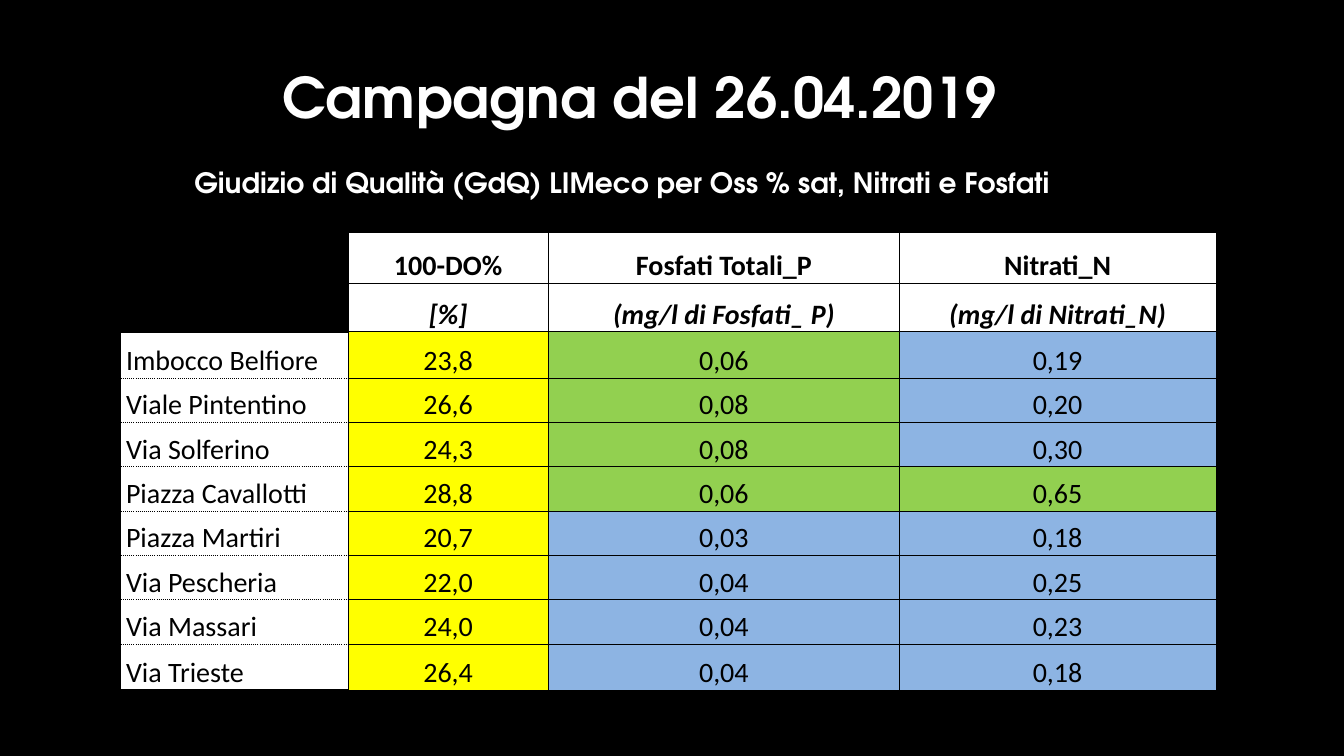
import pptx
import pptx.dml.color
import pptx.enum.text
import pptx.oxml.ns
import pptx.util
from lxml import etree

Inches = pptx.util.Inches
ALIGN = pptx.enum.text.PP_ALIGN
ANCHOR = pptx.enum.text.MSO_ANCHOR

BLACK, WHITE = "000000", "FFFFFF"
LEVELS = ["8DB4E3", "92D050", "FFFF00"]  # best to worst quality
LIMITS = [(10, 20), (0.05, 0.1), (0.6, 1.2)]  # level bounds per measure

COLS = [2.26, 1.99, 3.48, 3.14]
ROWS = [0.51, 0.48, 0.46] + [0.44] * 6 + [0.46]
HEADS = [
    ["", "100-DO%", "Fosfati Totali_P", "Nitrati_N"],
    ["", "[%]", "(mg/l di Fosfati_ P)", "(mg/l di Nitrati_N)"],
]
SITES = [
    ["Imbocco Belfiore", "23,8", "0,06", "0,19"],
    ["Viale Pintentino", "26,6", "0,08", "0,20"],
    ["Via Solferino", "24,3", "0,08", "0,30"],
    ["Piazza Cavallotti", "28,8", "0,06", "0,65"],
    ["Piazza Martiri", "20,7", "0,03", "0,18"],
    ["Via Pescheria", "22,0", "0,04", "0,25"],
    ["Via Massari", "24,0", "0,04", "0,23"],
    ["Via Trieste", "26,4", "0,04", "0,18"],
]


def color(code):
    return pptx.dml.color.RGBColor.from_string(code)


def style(para, face, size, code, bold=False, slant=False):
    for run in para.runs:
        font = run.font
        font.name, font.size = face, pptx.util.Pt(size)
        font.bold, font.italic = bold, slant
        font.color.rgb = color(code)


def label(shape, text, box, size):
    """Place a heading box and fill it with white text."""
    shape.left, shape.top, shape.width, shape.height = map(Inches, box)
    frame = shape.text_frame
    frame.text = text
    frame.word_wrap = True
    frame.auto_size = pptx.enum.text.MSO_AUTO_SIZE.SHAPE_TO_FIT_TEXT
    frame.vertical_anchor = ANCHOR.TOP
    para = frame.paragraphs[0]
    para.alignment = ALIGN.LEFT
    para.line_spacing = 1.0
    style(para, "TeX Gyre Adventor", size, WHITE, bold=True)


def border(cell, side, width=0.5, dash="solid"):
    qn = pptx.oxml.ns.qn
    props = cell._tc.get_or_add_tcPr()
    line = etree.SubElement(props, qn("a:ln" + side), w=str(pptx.util.Pt(width)))
    fill = etree.SubElement(line, qn("a:solidFill"))
    etree.SubElement(fill, qn("a:srgbClr"), val=BLACK)
    etree.SubElement(line, qn("a:prstDash"), val=dash)


def outline(cell, row, col):
    """Thin rules, with dots between sites and a thick frame around them."""
    site = col == 0 and row >= len(HEADS)
    last = len(ROWS) - 1
    border(cell, "L", 2 if site else 0.5)
    border(cell, "R")
    for side, edge in (("T", row == len(HEADS)), ("B", row == last)):
        if site and not edge:
            border(cell, side, dash="dot")
        elif site or (col == 0 and side == "B" and row == len(HEADS) - 1):
            border(cell, side, 2)
        else:
            border(cell, side)


def shade(text, row, col):
    """Fill by quality level; names and heads stay white."""
    if row < len(HEADS) or col == 0:
        return WHITE
    value = float(text.replace(",", "."))
    return LEVELS[sum(value >= limit for limit in LIMITS[col - 1])]


def write(cell, text, row, col):
    outline(cell, row, col)
    cell.margin_left = cell.margin_right = 0
    cell.margin_top = cell.margin_bottom = 0
    cell.vertical_anchor = ANCHOR.BOTTOM
    if not text:
        cell.fill.background()
        return
    cell.fill.solid()
    cell.fill.fore_color.rgb = color(shade(text, row, col))
    cell.text_frame.text = text
    para = cell.text_frame.paragraphs[0]
    if col == 0:
        cell.margin_left = Inches(0.06)
    else:
        para.alignment = ALIGN.CENTER
    style(para, "Calibri", 20, BLACK, bold=row < len(HEADS), slant=row == 1)


def grid(slide):
    frame = slide.shapes.add_table(
        len(ROWS), len(COLS), Inches(1.19), Inches(2.3),
        Inches(sum(COLS)), Inches(sum(ROWS)))
    table = frame.table
    table.first_row = table.horz_banding = False
    for col, width in zip(table.columns, COLS):
        col.width = Inches(width)
    for row, height in zip(table.rows, ROWS):
        row.height = Inches(height)
    for row, texts in enumerate(HEADS + SITES):
        for col, text in enumerate(texts):
            write(table.cell(row, col), text, row, col)


def main():
    deck = pptx.Presentation()
    deck.slide_width, deck.slide_height = Inches(13.33), Inches(7.5)
    slide = deck.slides.add_slide(deck.slide_layouts[5])
    slide.background.fill.solid()
    slide.background.fill.fore_color.rgb = color(BLACK)

    # Headings
    label(slide.shapes.title, "Campagna del 26.04.2019",
          (2.7, 0.57, 8.17, 0.77), 40)
    note = slide.shapes.add_textbox(0, 0, 0, 0)
    label(note, "Giudizio di Qualità (GdQ) LIMeco per Oss % sat, Nitrati e Fosfati",
          (1.83, 1.59, 8.92, 0.44), 20)

    # Measures by site
    grid(slide)
    deck.save("out.pptx")


if __name__ == "__main__":
    main()
